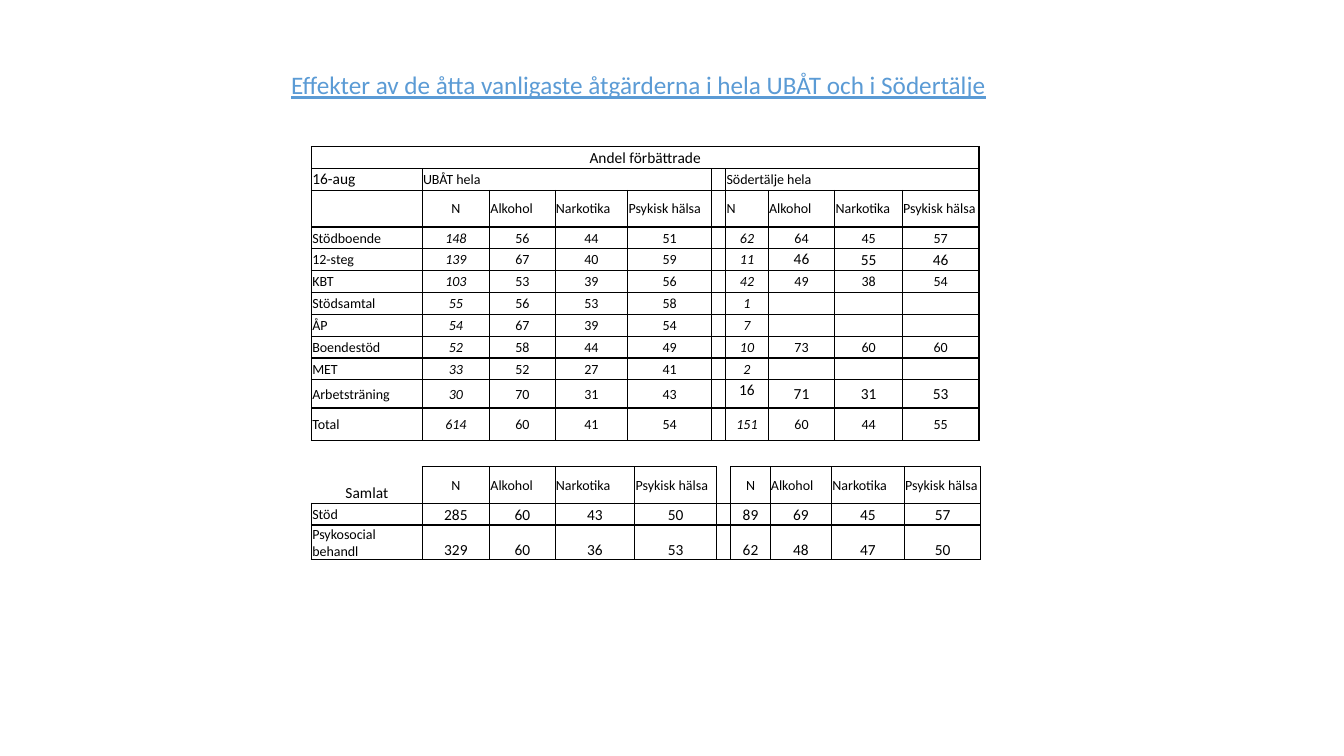
"""Build a slide with two tables on the effects of the most common measures."""
from lxml import etree
from pptx import Presentation
from pptx.dml.color import RGBColor
from pptx.enum.text import MSO_ANCHOR, MSO_AUTO_SIZE, PP_ALIGN
from pptx.oxml.ns import qn
from pptx.util import Cm, Pt

LEFT, CENTER = PP_ALIGN.LEFT, PP_ALIGN.CENTER
TOP, MIDDLE, BOTTOM = MSO_ANCHOR.TOP, MSO_ANCHOR.MIDDLE, MSO_ANCHOR.BOTTOM
GROW = MSO_AUTO_SIZE.SHAPE_TO_FIT_TEXT

HEAD = ["N", "Alkohol", "Narkotika", "Psykisk hälsa"]
MAIN = [
    ["Andel förbättrade"] + [""] * 9,
    ["16-aug", "UBÅT hela", "", "", "", "", "Södertälje hela", "", "", ""],
    ["", *HEAD, "", *HEAD],
    ["Stödboende", "148", "56", "44", "51", "", "62", "64", "45", "57"],
    ["12-steg", "139", "67", "40", "59", "", "11", "46", "55", "46"],
    ["KBT", "103", "53", "39", "56", "", "42", "49", "38", "54"],
    ["Stödsamtal", "55", "56", "53", "58", "", "1", "", "", ""],
    ["ÅP", "54", "67", "39", "54", "", "7", "", "", ""],
    ["Boendestöd", "52", "58", "44", "49", "", "10", "73", "60", "60"],
    ["MET", "33", "52", "27", "41", "", "2", "", "", ""],
    ["Arbetsträning", "30", "70", "31", "43", "", "16", "71", "31", "53"],
    ["Total", "614", "60", "41", "54", "", "151", "60", "44", "55"],
]
SUMS = [
    ["Samlat", *HEAD, "", *HEAD],
    ["Stöd", "285", "60", "43", "50", "", "89", "69", "45", "57"],
    ["Psykosocial behandl", "329", "60", "36", "53", "", "62", "48", "47", "50"],
]
MAIN_COLS = [2.79, 1.7, 1.65, 1.83, 2.11, 0.36, 1.07, 1.68, 1.7, 1.93]
SUMS_COLS = [2.79, 1.7, 1.65, 2.01, 2.06, 0.36, 0.99, 1.55, 1.83, 1.93]
MAIN_ROWS = [0.55, 0.55, 0.92] + [0.55] * 7 + [0.71, 0.82]
SUMS_ROWS = [0.92, 0.55, 0.55]
LARGE = {(0, 0), (1, 0), (4, 7), (4, 8), (4, 9),
         (10, 6), (10, 7), (10, 8), (10, 9)}
HIGH = {(1, 0), (4, 7), (10, 6)}


def color(code):
    return RGBColor.from_string(code)


def main_style(row, col):
    large = (row, col) in LARGE
    mid = row == 0 or (row > 2 and col > 0) or (row, col) == (2, 1)
    return {
        "size": 11 if large else 10,
        "align": CENTER if mid else LEFT,
        "anchor": TOP if (row, col) in HIGH else MIDDLE,
        "italic": row > 2 and col in (1, 6) and not large,
        "sides": "LRTB",
    }


def sums_style(row, col):
    data = row > 0 and col > 0
    title = (row, col) == (0, 0)
    sides = {(0, 0): "RB", (0, 5): "LRB"}
    return {
        "size": 11 if data or title else 10,
        "align": CENTER if data or title or col in (1, 6) else LEFT,
        "anchor": BOTTOM if data or title else MIDDLE,
        "italic": False,
        "sides": sides.get((row, col), "LRTB"),
    }


class Deck:
    """Hold the style and the current slide."""

    font = "Calibri"
    ink = "000000"
    accent = "5B9BD5"

    def __init__(self):
        self.prs = Presentation()
        self.prs.slide_width, self.prs.slide_height = Cm(33.87), Cm(19.05)
        self.slide = self.prs.slides.add_slide(self.prs.slide_layouts[6])

    def run(self, para, text, size, code, italic=False, under=False):
        run = para.add_run()
        run.text = text
        font = run.font
        font.name, font.size = self.font, Pt(size)
        font.italic, font.underline = italic, under
        font.color.rgb = color(code)

    def title(self, text, x, y, w, h):
        box = self.slide.shapes.add_textbox(Cm(x), Cm(y), Cm(w), Cm(h))
        frame = box.text_frame
        frame.word_wrap, frame.auto_size = True, GROW
        self.run(frame.paragraphs[0], text, 18, self.accent, under=True)

    def border(self, cell, sides):
        props = cell._tc.get_or_add_tcPr()
        for side in "LRTB":
            line = etree.SubElement(props, qn(f"a:ln{side}"), w=str(Pt(1)))
            if side in sides:
                fill = etree.SubElement(line, qn("a:solidFill"))
                etree.SubElement(fill, qn("a:srgbClr"), val=self.ink)
            else:
                etree.SubElement(line, qn("a:noFill"))

    def cell(self, cell, text, size, align, anchor, italic, sides):
        self.border(cell, sides)
        cell.fill.background()
        cell.margin_left = cell.margin_right = cell.margin_top = Cm(0.02)
        cell.margin_bottom = 0
        cell.vertical_anchor = anchor
        para = cell.text_frame.paragraphs[0]
        para.alignment = align
        if text:
            self.run(para, text, size, self.ink, italic)
        else:
            para._p.get_or_add_endParaRPr().set("sz", str(size * 100))

    def table(self, data, x, y, cols, rows, style):
        frame = self.slide.shapes.add_table(
            len(rows), len(cols), Cm(x), Cm(y), Cm(sum(cols)), Cm(sum(rows)))
        table = frame.table
        table.first_row = table.horz_banding = False
        for col, width in zip(table.columns, cols):
            col.width = Cm(width)
        for row, height in zip(table.rows, rows):
            row.height = Cm(height)
        for i, line in enumerate(data):
            for j, text in enumerate(line):
                self.cell(table.cell(i, j), text, **style(i, j))
        return table

    def merge(self, table, row, first, last):
        table.cell(row, first).merge(table.cell(row, last))


def main():
    deck = Deck()
    grid = deck.table(MAIN, 7.85, 3.7, MAIN_COLS, MAIN_ROWS, main_style)
    for row, first, last in [(0, 0, 9), (1, 1, 4), (1, 6, 9)]:
        deck.merge(grid, row, first, last)
    deck.table(SUMS, 7.85, 11.76, SUMS_COLS, SUMS_ROWS, sums_style)
    deck.title(
        "Effekter av de åtta vanligaste åtgärderna i hela UBÅT och i Södertälje",
        7.09, 1.63, 20.47, 1.02)
    deck.prs.save("out.pptx")


if __name__ == "__main__":
    main()
